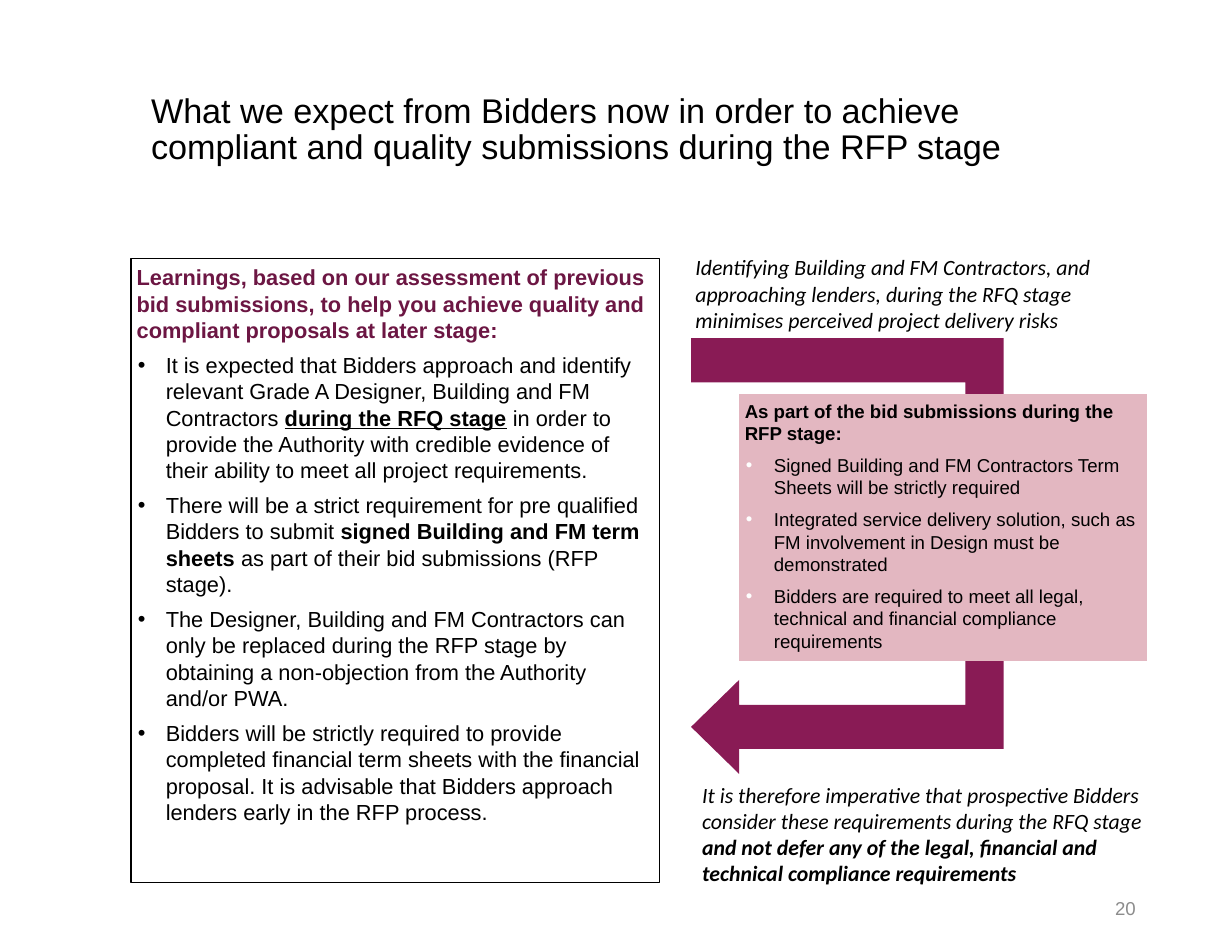
from dataclasses import dataclass

from lxml import etree
from pptx import Presentation
from pptx.dml.color import RGBColor
from pptx.enum.shapes import MSO_SHAPE
from pptx.enum.text import MSO_ANCHOR, PP_ALIGN
from pptx.oxml.ns import qn
from pptx.util import Inches, Pt

RECTANGLE = MSO_SHAPE.RECTANGLE
TOP, MIDDLE = MSO_ANCHOR.TOP, MSO_ANCHOR.MIDDLE
LEFT, RIGHT = PP_ALIGN.LEFT, PP_ALIGN.RIGHT

WIDTH, HEIGHT = 11, 8.5
COLUMNS, ROWS = 110, 85


@dataclass(frozen=True)
class Theme:
    ink: str = "000000"
    heading: str = "6C1643"
    arrow: str = "891B55"
    panel: str = "E3B7C1"
    white: str = "FFFFFF"
    muted: str = "8C8C8C"
    sans: str = "Arial"
    callout: str = "Calibri"
    title_size: int = 22
    body_size: int = 14
    small_size: int = 12


@dataclass(frozen=True)
class Box:
    column: float
    row: float
    columns: float
    rows: float

    def point(self, across, down):
        return (Inches((self.column + across) * WIDTH / COLUMNS),
                Inches((self.row + down) * HEIGHT / ROWS))

    def frame(self):
        return (*self.point(0, 0),
                Inches(self.columns * WIDTH / COLUMNS),
                Inches(self.rows * HEIGHT / ROWS))


THEME = Theme()
BOLD = {"bold": True}
STRESSED = {"bold": True, "underline": True}

LEARNINGS_HEADING = (
    "Learnings, based on our assessment of previous bid submissions, "
    "to help you achieve quality and compliant proposals at later stage:")
LEARNINGS = [
    [("It is expected that Bidders approach and identify relevant Grade A "
      "Designer, Building and FM Contractors ", {}),
     ("during the RFQ stage", STRESSED),
     (" in order to provide the Authority with credible evidence of their "
      "ability to meet all project requirements.", {})],
    [("There will be a strict requirement for pre qualified Bidders to submit ", {}),
     ("signed Building and FM term sheets ", BOLD),
     ("as part of their bid submissions (RFP stage).", {})],
    [("The Designer, Building and FM Contractors can only be replaced during "
      "the RFP stage by obtaining a non-objection from the Authority and/or PWA.", {})],
    [("Bidders will be strictly required to provide completed financial term "
      "sheets with the financial proposal. It is advisable that Bidders "
      "approach lenders early in the RFP process.", {})],
]
REQUIREMENTS_HEADING = "As part of the bid submissions during the RFP stage:"
REQUIREMENTS = [
    [("Signed Building and FM Contractors Term Sheets will be strictly required", {})],
    [("Integrated service delivery solution, such as FM involvement in Design "
      "must be demonstrated", {})],
    [("Bidders are required to meet all legal, technical and financial "
      "compliance requirements", {})],
]


def add_bullet(para, color):
    properties = para._p.get_or_add_pPr()
    properties.set("marL", str(Inches(0.26)))
    properties.set("indent", str(Inches(-0.25)))
    bullet_color = etree.SubElement(properties, qn("a:buClr"))
    etree.SubElement(bullet_color, qn("a:srgbClr"), val=color)
    etree.SubElement(properties, qn("a:buFont"), typeface=THEME.sans)
    etree.SubElement(properties, qn("a:buChar"), char="•")


def write(para, text, size=THEME.body_size, font=THEME.sans, color=THEME.ink,
          bold=False, italic=False, underline=False):
    span = para.add_run()
    span.text = text
    span.font.size = Pt(size)
    span.font.name = font
    span.font.color.rgb = RGBColor.from_string(color)
    span.font.bold = bold
    span.font.italic = italic
    span.font.underline = underline


def add_text_box(page, box, spans, anchor=TOP, align=LEFT, spacing=1.0, **style):
    frame = page.shapes.add_textbox(*box.frame()).text_frame
    frame.word_wrap = True
    frame.vertical_anchor = anchor
    para = frame.paragraphs[0]
    para.alignment = align
    para.line_spacing = spacing
    for text, emphasis in spans:
        write(para, text, **style, **emphasis)


def add_panel(page, box, heading, items, size, heading_color, bullet_color,
              fill=None, line=None):
    panel = page.shapes.add_shape(RECTANGLE, *box.frame())
    panel.shadow.inherit = False
    if fill:
        panel.fill.solid()
        panel.fill.fore_color.rgb = RGBColor.from_string(fill)
    else:
        panel.fill.background()
    if line:
        panel.line.color.rgb = RGBColor.from_string(line)
        panel.line.width = Pt(1)
    else:
        panel.line.fill.background()
    frame = panel.text_frame
    frame.word_wrap = True
    frame.vertical_anchor = TOP
    frame.margin_left = frame.margin_right = Inches(0.05)
    frame.margin_top = frame.margin_bottom = Inches(0.05)
    para = frame.paragraphs[0]
    para.alignment = LEFT
    para.space_after = Pt(6)
    write(para, heading, size=size, color=heading_color, bold=True)
    for spans in items:
        para = frame.add_paragraph()
        para.alignment = LEFT
        para.space_after = Pt(6)
        add_bullet(para, bullet_color)
        for text, emphasis in spans:
            write(para, text, size=size, **emphasis)


def add_return_arrow(page, box, shaft=3.95, arm=3.4, head_length=4.3, head_half=4.2):
    inner = box.columns - arm
    tip = box.rows - head_half
    upper, lower = tip - shaft / 2, tip + shaft / 2
    outline = [
        (box.columns, 0), (0, 0), (0, shaft), (inner, shaft), (inner, upper),
        (head_length, upper), (head_length, tip - head_half), (0, tip),
        (head_length, box.rows), (head_length, lower), (box.columns, lower),
    ]
    points = [box.point(*corner) for corner in outline]
    builder = page.shapes.build_freeform(*points[0])
    builder.add_line_segments(points[1:], close=True)
    arrow = builder.convert_to_shape()
    arrow.shadow.inherit = False
    arrow.fill.solid()
    arrow.fill.fore_color.rgb = RGBColor.from_string(THEME.arrow)
    arrow.line.fill.background()


def add_title(page, box):
    title = ("What we expect from Bidders now in order to achieve compliant "
             "and quality submissions during the RFP stage")
    add_text_box(page, box, [(title, {})], anchor=MIDDLE, spacing=0.9,
                 size=THEME.title_size)


def add_process(page, box):
    left, top = box.column, box.row
    add_return_arrow(page, Box(left + 0.6, top + 8, 27.9, 38.9))
    add_panel(page, Box(left + 4.9, top + 13, 36.4, 23.8), REQUIREMENTS_HEADING,
              REQUIREMENTS, THEME.small_size, THEME.ink, THEME.white, fill=THEME.panel)
    add_text_box(page, Box(left, top, box.columns, 8.1), [
        ("Identifying Building and FM Contractors, and approaching lenders, "
         "during the RFQ stage minimises perceived project delivery risks", {}),
    ], font=THEME.callout, italic=True)
    add_text_box(page, Box(left + 0.6, top + 47.1, box.columns - 0.6, 10.4), [
        ("It is therefore imperative that prospective Bidders consider these "
         "requirements during the RFQ stage ", {}),
        ("and not defer any of the legal, financial and technical compliance "
         "requirements", BOLD),
    ], font=THEME.callout, italic=True)


def main():
    deck = Presentation()
    deck.slide_width, deck.slide_height = Inches(WIDTH), Inches(HEIGHT)
    page = deck.slides.add_slide(deck.slide_layouts[6])
    add_title(page, Box(12.5, 7.8, 81.1, 7.7))
    add_text_box(page, Box(77.7, 78.8, 24.7, 4.5), [("20", {})], anchor=MIDDLE,
                 align=RIGHT, size=THEME.small_size, color=THEME.muted)
    add_panel(page, Box(11.7, 23.1, 47.2, 55.7), LEARNINGS_HEADING, LEARNINGS,
              THEME.body_size, THEME.heading, THEME.ink, line=THEME.ink)
    add_process(page, Box(61.1, 22.2, 43.5, 57.5))
    deck.save("out.pptx")


if __name__ == "__main__":
    main()
